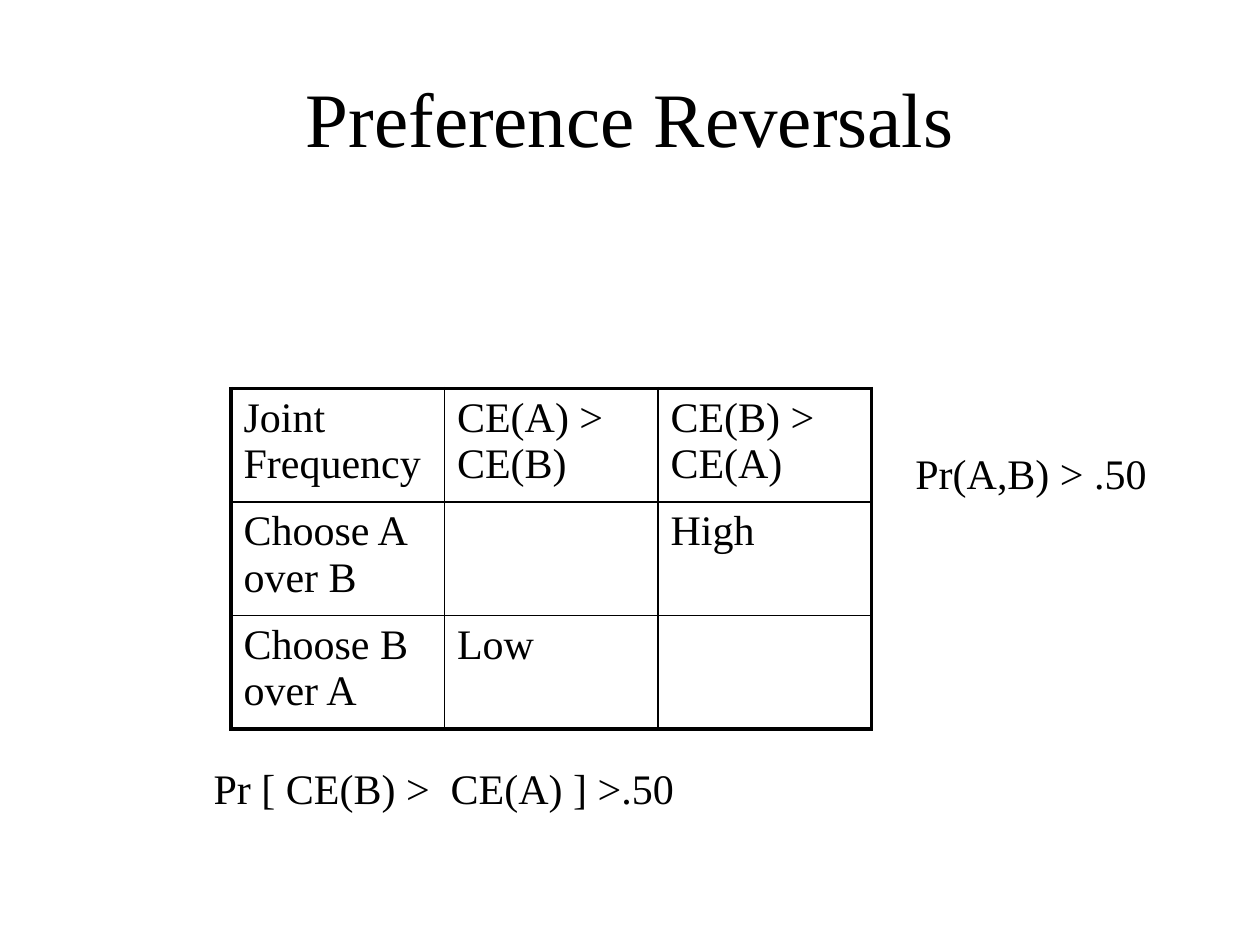
from dataclasses import dataclass

from lxml import etree
from pptx import Presentation
from pptx import util as u
from pptx.dml.color import RGBColor
from pptx.enum import text
from pptx.oxml.ns import qn


@dataclass(frozen=True)
class Theme:
    font: str = "Times New Roman"
    ink: str = "000000"
    title_size: float = 44
    body_size: float = 24
    outer_line: float = 2.25
    inner_line: float = 1


class SlideBuilder:
    def __init__(self, page, theme):
        self.page = page
        self.theme = theme

    def style(self, paragraph, size):
        paragraph.font.name = self.theme.font
        paragraph.font.size = u.Pt(size)
        paragraph.font.color.rgb = RGBColor.from_string(self.theme.ink)

    def label(self, words, left, top, width, height, size=None,
              align=text.PP_ALIGN.LEFT, anchor=text.MSO_ANCHOR.TOP):
        box = self.page.shapes.add_textbox(*map(u.Pt, (left, top, width, height)))
        frame = box.text_frame
        frame.word_wrap = True
        frame.vertical_anchor = anchor
        frame.text = words
        paragraph = frame.paragraphs[0]
        paragraph.alignment = align
        self.style(paragraph, size or self.theme.body_size)

    def border(self, cell, side, width):
        properties = cell._tc.get_or_add_tcPr()
        line = etree.SubElement(properties, qn(f"a:ln{side}"), w=str(u.Pt(width)))
        fill = etree.SubElement(line, qn("a:solidFill"))
        etree.SubElement(fill, qn("a:srgbClr"), val=self.theme.ink)

    def table(self, rows, left, top, column_width, row_heights):
        row_count, column_count = len(rows), len(rows[0])
        frame = self.page.shapes.add_table(
            row_count, column_count, u.Pt(left), u.Pt(top),
            u.Pt(column_width * column_count), u.Pt(sum(row_heights)))
        grid = frame.table
        grid.first_row = False
        grid.horz_banding = False
        for column in grid.columns:
            column.width = u.Pt(column_width)
        for r, (row, height) in enumerate(zip(rows, row_heights)):
            grid.rows[r].height = u.Pt(height)
            for c, words in enumerate(row):
                cell = grid.cell(r, c)
                cell.text = words
                self.style(cell.text_frame.paragraphs[0], self.theme.body_size)
                outer_sides = {"L": c == 0, "R": c == column_count - 1,
                               "T": r == 0, "B": r == row_count - 1}
                for side, outer in outer_sides.items():
                    self.border(cell, side, self.theme.outer_line if outer
                                else self.theme.inner_line)
                cell.fill.background()


def main():
    deck = Presentation()
    deck.slide_width, deck.slide_height = u.Pt(720), u.Pt(540)
    theme = Theme()
    slide = SlideBuilder(deck.slides.add_slide(deck.slide_layouts[6]), theme)

    slide.label("Preference Reversals", 36, 21.6, 648, 90, theme.title_size,
                text.PP_ALIGN.CENTER, text.MSO_ANCHOR.MIDDLE)
    slide.table([["Joint Frequency", "CE(A) > CE(B)", "CE(B) > CE(A)"],
                 ["Choose A over B", "", "High"],
                 ["Choose B over A", "Low", ""]],
                132, 222, 122, [60, 64.8, 64.8])
    slide.label("Pr(A,B) > .50", 516, 252, 162, 36)
    slide.label("Pr [ CE(B) >  CE(A) ] >.50", 115, 432, 300, 36)

    deck.save("out.pptx")


if __name__ == "__main__":
    main()
